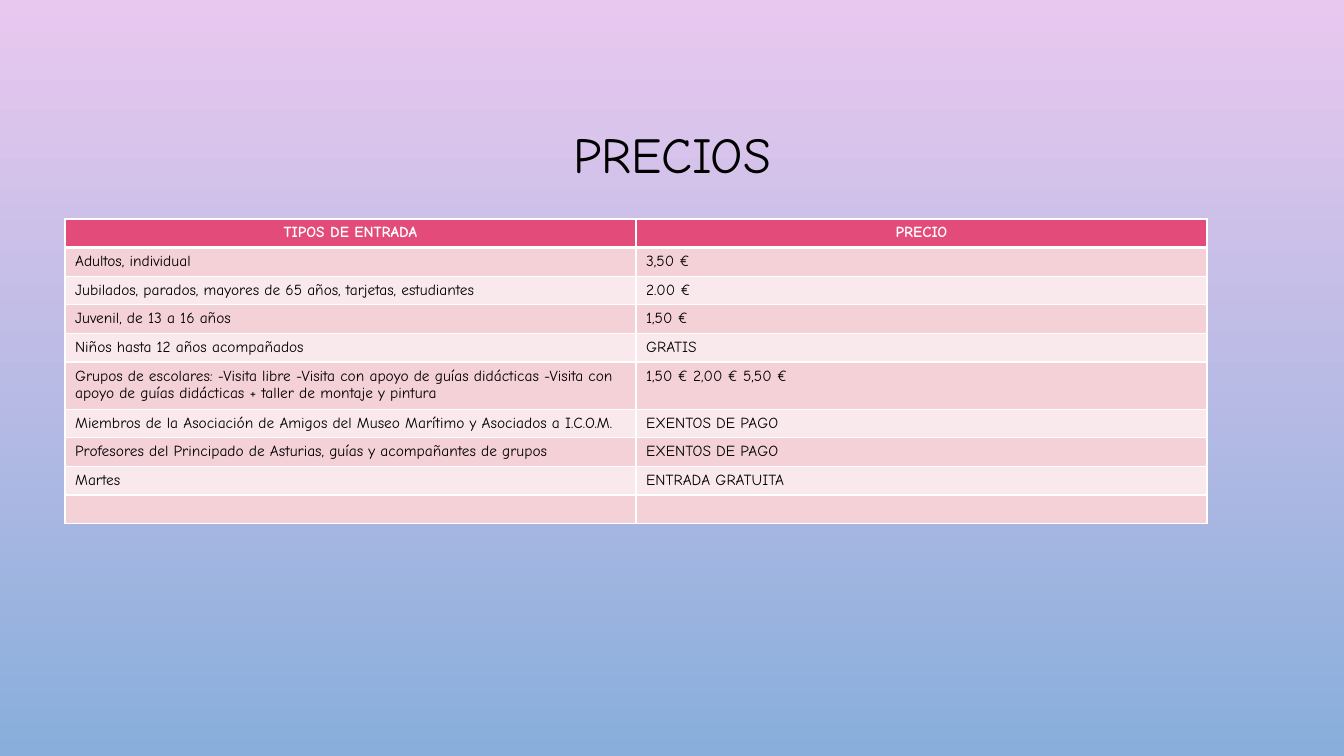
from pptx import Presentation, util as u
from pptx.dml.color import RGBColor
from pptx.enum import text
from pptx.oxml import parse_xml
from pptx.oxml.ns import nsdecls

PX = 914400 / 100.8
FONT = "Comic Neue"
COLORS = {
    "top": "E9C8EF", "bottom": "89AEDB", "head": "E34B7A",
    "odd": "F4D0D7", "even": "FAE9EC", "white": "FFFFFF", "black": "000000",
}
HEAD = ("TIPOS DE ENTRADA", "PRECIO")
PRICES = [
    ("Adultos, individual", "3,50 €"),
    ("Jubilados, parados, mayores de 65 años, tarjetas, estudiantes", "2.00 €"),
    ("Juvenil, de 13 a 16 años", "1,50 €"),
    ("Niños hasta 12 años acompañados", "GRATIS"),
    ("Grupos de escolares: -Visita libre -Visita con apoyo de guías didácticas "
     "-Visita con apoyo de guías didácticas + taller de montaje y pintura",
     "1,50 € 2,00 € 5,50 €"),
    ("Miembros de la Asociación de Amigos del Museo Marítimo y Asociados a I.C.O.M.",
     "EXENTOS DE PAGO"),
    ("Profesores del Principado de Asturias, guías y acompañantes de grupos",
     "EXENTOS DE PAGO"),
    ("Martes", "ENTRADA GRATUITA"),
    ("", ""),
]
ROW, TALL = 28, 46


def px(n):
    return u.Emu(round(n * PX))


def rgb(name):
    return RGBColor.from_string(COLORS[name])


def style(para, size, color, bold=False):
    font = para.font
    font.name, font.size, font.bold = FONT, u.Pt(size), bold
    font.color.rgb = rgb(color)


def paint(slide):
    """Fill the background with a gradient from top to bottom."""
    fill = slide.background.fill
    fill.gradient()
    fill.gradient_angle = 270
    for stop, name in zip(fill.gradient_stops, ("top", "bottom")):
        stop.color.rgb = rgb(name)


def add_title(slide, words):
    frame = slide.shapes.add_textbox(px(101), px(69), px(1142), px(176)).text_frame
    frame.word_wrap = True
    frame.vertical_anchor = text.MSO_ANCHOR.MIDDLE
    para = frame.paragraphs[0]
    para.text = words
    para.alignment = text.PP_ALIGN.CENTER
    para.line_spacing = 0.9
    style(para, 36, "black")


def add_edges(cell, top, bottom):
    """Draw white cell borders; top and bottom are widths in points."""
    props = cell._tc.get_or_add_tcPr()
    for side, width in (("L", 1), ("R", 1), ("T", top), ("B", bottom)):
        props.append(parse_xml(
            f'<a:ln{side} {nsdecls("a")} w="{u.Pt(width)}"><a:solidFill>'
            f'<a:srgbClr val="{COLORS["white"]}"/></a:solidFill></a:ln{side}>'))


def fill_cell(cell, words, row):
    head = row == 0
    add_edges(cell, 3 if row == 1 else 1, 3 if head else 1)
    cell.fill.solid()
    cell.fill.fore_color.rgb = rgb("head" if head else "odd" if row % 2 else "even")
    para = cell.text_frame.paragraphs[0]
    if words:
        para.text = words
    else:
        para._p.append(parse_xml(f'<a:endParaRPr {nsdecls("a")} sz="1100"/>'))
    if head:
        para.alignment = text.PP_ALIGN.CENTER
    style(para, 11, "white" if head else "black", head)


def add_prices(slide):
    rows = [HEAD] + PRICES
    high = [TALL if len(kind) > 100 else ROW for kind, _ in rows]
    table = slide.shapes.add_table(
        len(rows), 2, px(65), px(219), px(1142), px(sum(high))).table
    for col in table.columns:
        col.width = px(571)
    for i, pair in enumerate(rows):
        table.rows[i].height = px(high[i])
        for j, words in enumerate(pair):
            fill_cell(table.cell(i, j), words, i)


def main():
    deck = Presentation()
    deck.slide_width, deck.slide_height = px(1344), px(756)
    slide = deck.slides.add_slide(deck.slide_layouts[6])
    paint(slide)
    add_title(slide, "PRECIOS")
    add_prices(slide)
    deck.save("out.pptx")


if __name__ == "__main__":
    main()
